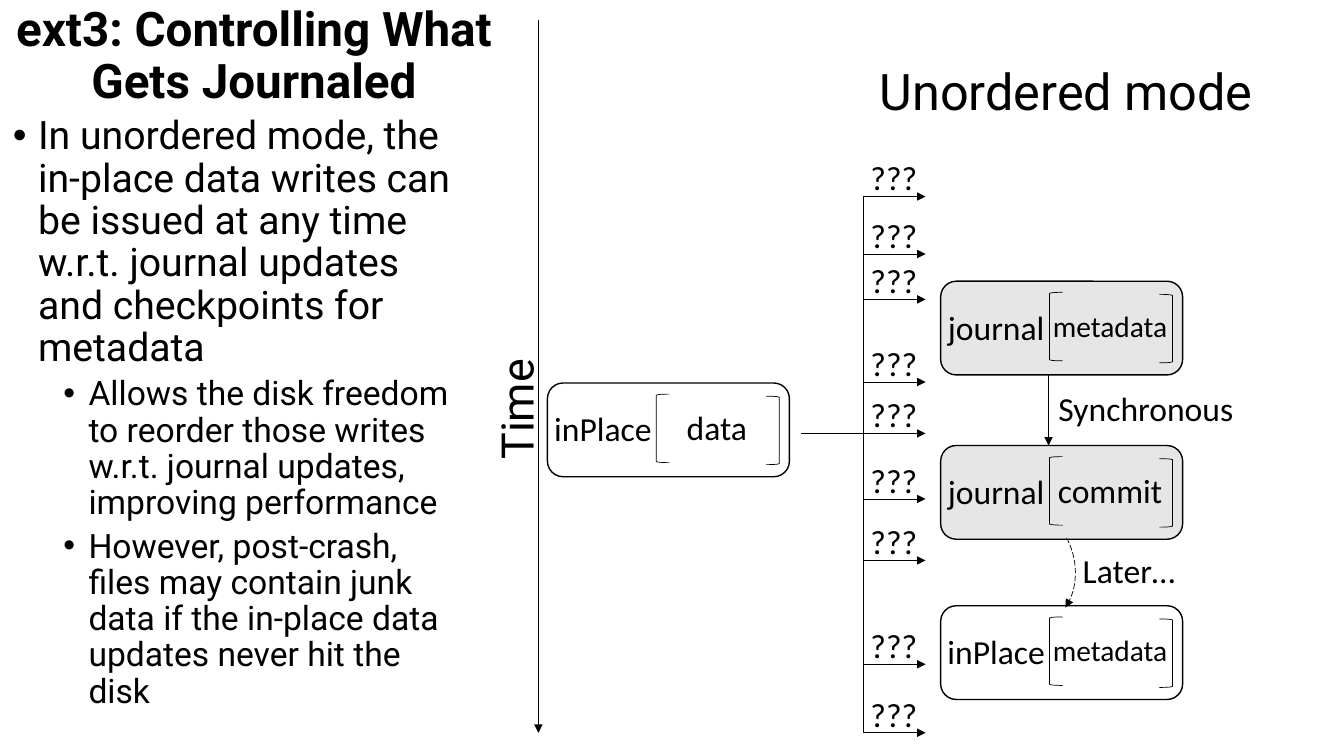
from dataclasses import dataclass

from lxml import etree
from pptx import Presentation
from pptx.dml.color import RGBColor
from pptx.enum.dml import MSO_LINE
from pptx.enum.shapes import MSO_CONNECTOR, MSO_SHAPE
from pptx.enum.text import MSO_ANCHOR, PP_ALIGN
from pptx.oxml.ns import qn
from pptx.util import Inches, Pt

LEFT, CENTER = PP_ALIGN.LEFT, PP_ALIGN.CENTER
TOP, MIDDLE = MSO_ANCHOR.TOP, MSO_ANCHOR.MIDDLE
STRAIGHT = MSO_CONNECTOR.STRAIGHT
ROUNDED, ARC = MSO_SHAPE.ROUNDED_RECTANGLE, MSO_SHAPE.ARC
LEFT_BRACKET, RIGHT_BRACKET = MSO_SHAPE.LEFT_BRACKET, MSO_SHAPE.RIGHT_BRACKET
LONG_DASH = MSO_LINE.LONG_DASH


@dataclass(frozen=True)
class Theme:
    ink: RGBColor = RGBColor(0x00, 0x00, 0x00)
    paper: RGBColor = RGBColor(0xFF, 0xFF, 0xFF)
    shade: RGBColor = RGBColor(0xE7, 0xE6, 0xE6)
    heading_font: str = "Roboto"
    label_font: str = "Calibri"
    mode_size: int = 36
    title_size: int = 34
    axis_size: int = 32
    body_size: int = 28
    label_size: int = 24
    small_size: int = 21
    thin: float = 0.5
    outline: float = 1


class JournalSlide:
    """Draws the elements of a journaling diagram on one slide in one style."""

    def __init__(self, page, theme):
        self.page = page
        self.theme = theme

    def add_span(self, para, text, size, font, bold=False):
        span = para.add_run()
        span.text = text
        span.font.size = Pt(size)
        span.font.name = font
        span.font.bold = bold
        span.font.color.rgb = self.theme.ink

    def frame(self, left, top, width, height, anchor=TOP):
        box = self.page.shapes.add_textbox(
            Inches(left), Inches(top), Inches(width), Inches(height))
        box.text_frame.word_wrap = True
        box.text_frame.vertical_anchor = anchor
        return box

    def heading(self, text, left, top, width, height, size, bold=False, spacing=1.0):
        box = self.frame(left, top, width, height, MIDDLE)
        para = box.text_frame.paragraphs[0]
        para.alignment = CENTER
        para.line_spacing = spacing
        self.add_span(para, text, size, self.theme.heading_font, bold)
        return box

    def label(self, text, left, top, width, size=None, align=CENTER):
        box = self.frame(left, top, width, 0.5, MIDDLE)
        para = box.text_frame.paragraphs[0]
        para.alignment = align
        self.add_span(para, text, size or self.theme.label_size, self.theme.label_font)

    def bullets(self, items, left, top, width, height):
        levels = ((0.25, 10, self.theme.body_size), (0.75, 5, self.theme.label_size))
        text_frame = self.frame(left, top, width, height).text_frame
        for index, (level, text) in enumerate(items):
            indent, space, size = levels[level]
            para = text_frame.add_paragraph() if index else text_frame.paragraphs[0]
            para.level = level
            para.line_spacing = 0.9
            para.space_before = Pt(space)
            properties = para._p.get_or_add_pPr()
            properties.set("marL", str(Inches(indent)))
            properties.set("indent", str(Inches(-0.25)))
            etree.SubElement(properties, qn("a:buFont"), typeface="Arial")
            etree.SubElement(properties, qn("a:buChar"), char="•")
            self.add_span(para, text, size, self.theme.heading_font)

    def shape(self, kind, left, top, width, height, weight, fill=None):
        shape = self.page.shapes.add_shape(
            kind, Inches(left), Inches(top), Inches(width), Inches(height))
        shape.shadow.inherit = False
        shape.line.color.rgb = self.theme.ink
        shape.line.width = Pt(weight)
        if fill is None:
            shape.fill.background()
        else:
            shape.fill.solid()
            shape.fill.fore_color.rgb = fill
        return shape

    def arrowhead(self, item):
        etree.SubElement(item.line._get_or_add_ln(), qn("a:tailEnd"), type="triangle")

    def line(self, start, end, arrow=True):
        x_start, y_start = start
        x_end, y_end = end
        line = self.page.shapes.add_connector(
            STRAIGHT, Inches(x_start), Inches(y_start), Inches(x_end), Inches(y_end))
        line.line.color.rgb = self.theme.ink
        line.line.width = Pt(self.theme.thin)
        if arrow:
            self.arrowhead(line)
        etree.SubElement(line._element.spPr, qn("a:effectLst"))

    def curved_arrow(self, left, top, width, height, rotation, angles):
        arc = self.shape(ARC, left, top, width, height, self.theme.thin)
        arc.rotation = rotation
        for index, angle in enumerate(angles):
            arc.adjustments[index] = angle
        arc.line.dash_style = LONG_DASH
        self.arrowhead(arc)

    def record(self, left, top, place, content, fill, size=None):
        self.shape(ROUNDED, left, top, 2.4, 0.93, self.theme.outline, fill)
        self.label(content, left + 0.98, top + 0.19, 1.4, size)
        self.shape(RIGHT_BRACKET, left + 2.17, top + 0.13, 0.13, 0.68, self.theme.thin)
        self.shape(LEFT_BRACKET, left + 1.08, top + 0.11, 0.13, 0.68, self.theme.thin)
        self.label(place, left - 0.04, top + 0.2, 1.18)


def main():
    theme = Theme()
    deck = Presentation()
    deck.slide_width, deck.slide_height = Inches(13.33), Inches(7.5)
    page = deck.slides.add_slide(deck.slide_layouts[6])
    slide = JournalSlide(page, theme)

    slide.heading("ext3: Controlling What Gets Journaled", 0.01, 0.01, 5.02, 1.11,
                  theme.title_size, bold=True, spacing=0.9)
    slide.line((5.34, 0.2), (5.34, 7.27))
    time_axis = slide.heading("Time", 4.44, 3.74, 1.35, 0.64, theme.axis_size)
    time_axis.rotation = 270
    slide.bullets((
        (0, "In unordered mode, the in-place data writes can be issued at any time "
            "w.r.t. journal updates and checkpoints for metadata"),
        (1, "Allows the disk freedom to reorder those writes w.r.t. journal updates, "
            "improving performance"),
        (1, "However, post-crash, files may contain junk data if the in-place data "
            "updates never hit the disk"),
    ), 0.03, 1.1, 4.63, 6.41)

    slide.heading("Unordered mode", 8.48, 0.54, 4.19, 0.71, theme.mode_size)
    slide.record(5.43, 3.8, "inPlace", "data", theme.paper)
    slide.record(9.33, 2.79, "journal", "metadata", theme.shade, theme.small_size)
    slide.record(9.33, 4.42, "journal", "commit", theme.shade)
    slide.record(9.33, 6.01, "inPlace", "metadata", theme.paper, theme.small_size)

    slide.line((10.4, 3.72), (10.4, 4.42))
    slide.label("Synchronous", 10.4, 3.8, 1.97, align=LEFT)
    slide.curved_arrow(9.17, 4.92, 1.53, 1.36, 39.7, (178.78, 212.65))
    slide.label("Later…", 10.64, 5.41, 1.19, align=LEFT)

    spine, data_level = 8.56, 4.3
    moments = (1.95, 2.52, 2.97, 3.79, data_level, 4.95, 5.56, 6.59, 7.27)
    slide.line((spine, moments[-1]), (spine, moments[0]), arrow=False)
    for moment in moments:
        slide.line((spine, moment), (spine + 0.62, moment))
        slide.label("???", spine - 0.14, moment - 0.44, 0.89)
    slide.line((spine - 0.62, data_level), (spine, data_level), arrow=False)

    deck.save("out.pptx")


if __name__ == "__main__":
    main()
